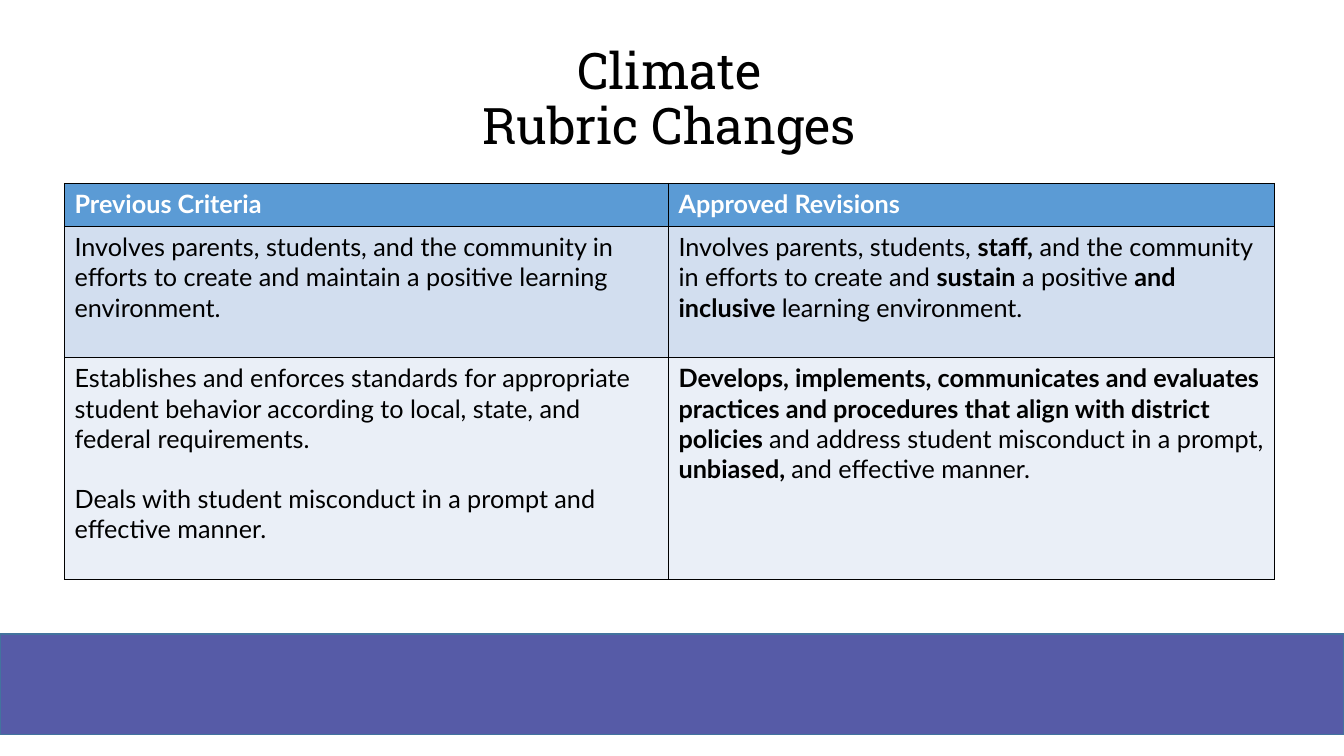
from lxml import etree
from pptx import Presentation
from pptx.dml.color import RGBColor
from pptx.enum.shapes import MSO_SHAPE
from pptx.enum.text import MSO_ANCHOR, PP_ALIGN
from pptx.oxml.ns import qn
from pptx.util import Inches, Pt

RECT = MSO_SHAPE.RECTANGLE
MIDDLE = MSO_ANCHOR.MIDDLE
CENTER = PP_ALIGN.CENTER
TITLE_ONLY = 5
BLACK, WHITE = "000000", "FFFFFF"
FILLS = ["5B9BD5", "D2DEEF", "EAEFF7"]
WIDTHS = [5.99, 6.01]
HEIGHTS = [0.43, 1.3, 2.2]
ROWS = [
    [
        [[("Previous Criteria", True)]],
        [[("Approved Revisions", True)]],
    ],
    [
        [[("Involves parents, students, and the community in efforts to create "
           "and maintain a positive learning environment.", False)]],
        [[("Involves parents, students, ", False),
          ("staff,", True),
          (" and the community in efforts to create and ", False),
          ("sustain", True),
          (" a positive ", False),
          ("and inclusive ", True),
          ("learning environment.", False)]],
    ],
    [
        [[("Establishes and enforces standards for appropriate student behavior "
           "according to local, state, and federal requirements.", False)],
         [("Deals with student misconduct in a prompt and effective manner.", False)]],
        [[("Develops, implements, communicates and evaluates practices and "
           "procedures that align with district policies ", True),
          ("and address student misconduct in a prompt, ", False),
          ("unbiased, ", True),
          ("and effective manner.", False)]],
    ],
]


def paint(color, value):
    """Set a colour from a hex string."""
    color.rgb = RGBColor.from_string(value)


def fill_with(fill, value):
    """Make a fill solid in the given colour."""
    fill.solid()
    paint(fill.fore_color, value)


def add_run(para, text, size, face, color, bold=False):
    """Add one formatted run to a paragraph."""
    run = para.add_run()
    run.text = text
    font = run.font
    font.size, font.name, font.bold = Pt(size), face, bold
    paint(font.color, color)


def add_band(slide):
    """Draw the coloured band at the foot."""
    band = slide.shapes.add_shape(RECT, 0, Inches(6.29), Inches(13.33), Inches(1))
    band.shadow.inherit = False
    fill_with(band.fill, "565BA7")
    paint(band.line.color, "43739E")
    band.line.width = Pt(1)


def set_title(slide, lines):
    """Place the title and write its lines."""
    title = slide.shapes.title
    title.left, title.top = Inches(0.64), Inches(0.4)
    title.width, title.height = Inches(12), Inches(1.2)
    frame = title.text_frame
    frame.word_wrap = True
    frame.vertical_anchor = MIDDLE
    para = frame.paragraphs[0]
    para.alignment = CENTER
    para.line_spacing = 0.9
    for i, line in enumerate(lines):
        if i:
            para.add_line_break()
        add_run(para, line, 36, "Roboto Slab", BLACK)


def add_edges(cell):
    """Give a cell thin black borders on all sides."""
    props = cell._tc.get_or_add_tcPr()
    for side in ("lnL", "lnR", "lnT", "lnB"):
        edge = etree.SubElement(props, qn("a:" + side), w=str(Pt(1)))
        solid = etree.SubElement(edge, qn("a:solidFill"))
        etree.SubElement(solid, qn("a:srgbClr"), val=BLACK)


def fill_cell(cell, paras, fill, color):
    """Write and style one table cell."""
    add_edges(cell)
    fill_with(cell.fill, fill)
    frame = cell.text_frame
    for i, runs in enumerate(paras):
        para = frame.add_paragraph() if i else frame.paragraphs[0]
        if i:
            para.space_before = Pt(21.6)
        for text, bold in runs:
            add_run(para, text, 18, "Lato", color, bold)


def add_rubric(slide):
    """Add the table of old and new criteria."""
    frame = slide.shapes.add_table(
        len(ROWS), len(WIDTHS), Inches(0.64), Inches(1.82),
        Inches(sum(WIDTHS)), Inches(sum(HEIGHTS)))
    table = frame.table
    for col, width in zip(table.columns, WIDTHS):
        col.width = Inches(width)
    for r, cells in enumerate(ROWS):
        table.rows[r].height = Inches(HEIGHTS[r])
        for c, paras in enumerate(cells):
            fill_cell(table.cell(r, c), paras, FILLS[r], BLACK if r else WHITE)


def main():
    """Build and save the slide."""
    deck = Presentation()
    deck.slide_width, deck.slide_height = Inches(13.33), Inches(7.5)
    slide = deck.slides.add_slide(deck.slide_layouts[TITLE_ONLY])
    add_band(slide)
    set_title(slide, ["Climate", "Rubric Changes"])
    add_rubric(slide)
    deck.save("out.pptx")


if __name__ == "__main__":
    main()
